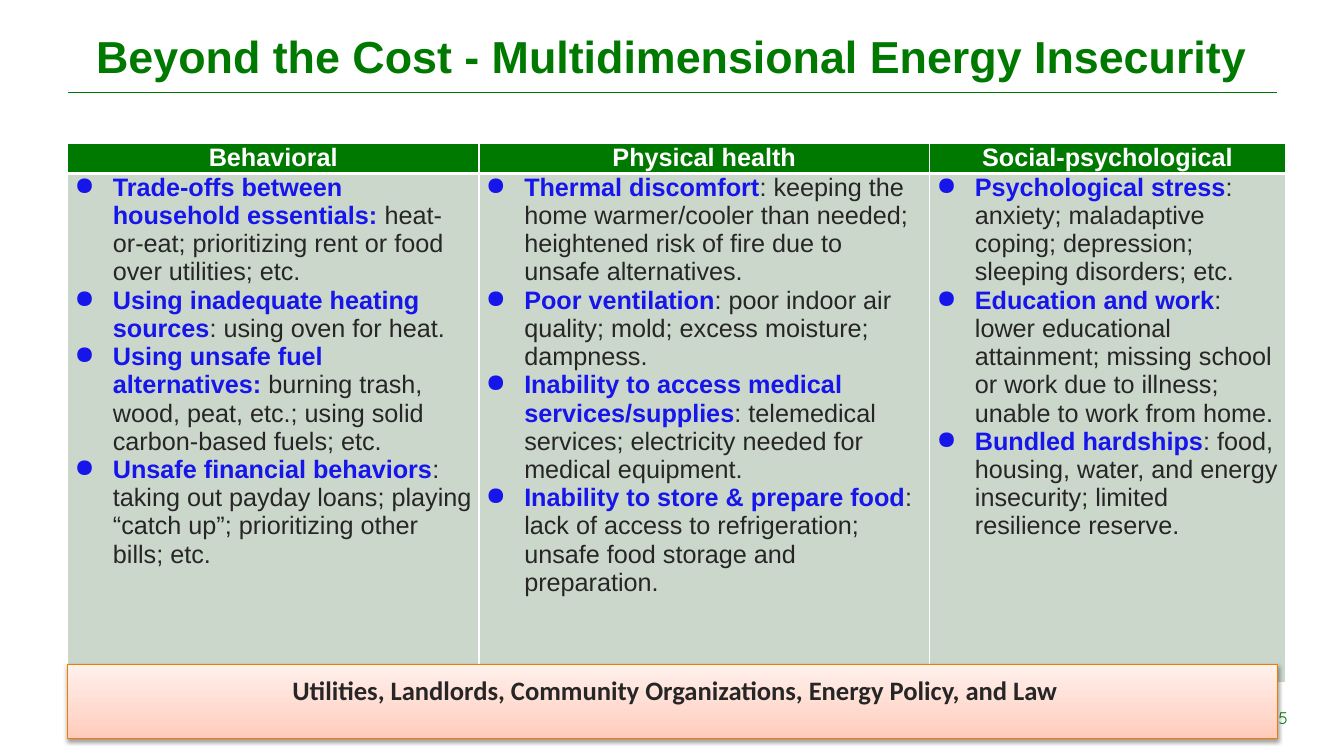
from lxml import etree
from pptx import Presentation
from pptx.dml.color import RGBColor
from pptx.enum.shapes import MSO_CONNECTOR as Connector, MSO_SHAPE as Shape
from pptx.enum.text import MSO_ANCHOR as Anchor, PP_ALIGN as Align
from pptx.oxml import parse_xml
from pptx.oxml.ns import nsdecls, qn
from pptx.util import Inches, Pt

TITLE = "Beyond the Cost - Multidimensional Energy Insecurity"
FOOTING = "Utilities, Landlords, Community Organizations, Energy Policy, and Law"
PAGE_NUMBER = "5"
# Heading, column width, and (bold lead, plain rest) points
DIMENSIONS = [
    ("Behavioral", 4.08, [
        ("Trade-offs between household essentials: ",
         "heat-or-eat; prioritizing rent or food over utilities; etc."),
        ("Using inadequate heating sources", ": using oven for heat."),
        ("Using unsafe fuel alternatives: ",
         "burning trash, wood, peat, etc.; using solid carbon-based fuels; etc."),
        ("Unsafe financial behaviors",
         ": taking out payday loans; playing “catch up”; prioritizing other bills; etc."),
    ]),
    ("Physical health", 4.47, [
        ("Thermal discomfort",
         ": keeping the home warmer/cooler than needed; "
         "heightened risk of fire due to unsafe alternatives."),
        ("Poor ventilation",
         ": poor indoor air quality; mold; excess moisture; dampness."),
        ("Inability to access medical services/supplies",
         ": telemedical services; electricity needed for medical equipment."),
        ("Inability to store & prepare food",
         ": lack of access to refrigeration; unsafe food storage and preparation."),
    ]),
    ("Social-psychological", 3.53, [
        ("Psychological stress",
         ": anxiety; maladaptive coping; depression; sleeping disorders; etc."),
        ("Education and work",
         ": lower educational attainment; missing school or work due to illness; "
         "unable to work from home."),
        ("Bundled hardships",
         ": food, housing, water, and energy insecurity; limited resilience reserve."),
    ]),
]

COLOURS = {"green": "007900", "rule": "007600", "white": "FFFFFF", "lead": "1616EA",
           "text": "262626", "cell": "CCD7CC", "orange": "F27C00"}
BAND_STOPS = [(0, "FFCAB9"), (35, "FFD9CE"), (100, "FFF1EC")]
FORMATS = {
    "title": dict(name="Arial", size=Pt(32), bold=True),
    "strong": dict(name="Arial", size=Pt(18), bold=True),
    "plain": dict(name="Arial", size=Pt(18), bold=False),
    "band": dict(name="Calibri", size=Pt(19), bold=True),
    "number": dict(name="Quicksand", size=Pt(12), bold=False),
}
WIDTH, HEIGHT = 13.33, 7.5
LEFT, CONTENT_WIDTH = 0.67, 12
TABLE_TOP, ROW_HEIGHTS = 1.42, (0.28, 5.05)
INDENT = 0.38


def colour(name):
    return RGBColor.from_string(COLOURS[name])


def area(*lengths):
    return [Inches(length) for length in lengths]


def add_span(para, text, style, ink):
    span = para.add_run()
    span.text = text
    for key, value in FORMATS[style].items():
        setattr(span.font, key, value)
    span.font.color.rgb = colour(ink)


def fill_frame(frame, text, style, ink, align, anchor):
    frame.word_wrap = True
    frame.vertical_anchor = anchor
    para = frame.paragraphs[0]
    para.alignment = align
    add_span(para, text, style, ink)


def add_bullet(para):
    props = para._p.get_or_add_pPr()
    props.set("marL", str(Inches(INDENT)))
    props.set("indent", str(-Inches(INDENT)))
    etree.SubElement(props, qn("a:buChar")).set("char", "●")


def format_cell(cell, fill, bottom_width):
    cell.margin_left = cell.margin_right = Inches(0.07)
    cell.margin_top = cell.margin_bottom = 0
    props = cell._tc.get_or_add_tcPr()
    for side, width in (("L", 1), ("R", 1), ("T", 1), ("B", bottom_width)):
        props.append(parse_xml(
            f'<a:ln{side} {nsdecls("a")} w="{Pt(width)}"><a:solidFill>'
            f'<a:srgbClr val="{COLOURS["white"]}"/></a:solidFill></a:ln{side}>'))
    cell.fill.solid()
    cell.fill.fore_color.rgb = colour(fill)


def add_dimensions(page):
    table_width = sum(width for _, width, _ in DIMENSIONS)
    table = page.shapes.add_table(
        2, len(DIMENSIONS),
        *area(LEFT, TABLE_TOP, table_width, sum(ROW_HEIGHTS))).table
    table.horz_banding = False
    for row, height in zip(table.rows, ROW_HEIGHTS):
        row.height = Inches(height)
    for index, (heading, width, points) in enumerate(DIMENSIONS):
        table.columns[index].width = Inches(width)
        header, body = table.cell(0, index), table.cell(1, index)
        format_cell(header, "green", 3)
        format_cell(body, "cell", 1)
        para = header.text_frame.paragraphs[0]
        para.alignment = Align.CENTER
        add_span(para, heading, "strong", "white")
        frame = body.text_frame
        for number, (lead, rest) in enumerate(points):
            para = frame.add_paragraph() if number else frame.paragraphs[0]
            add_bullet(para)
            add_span(para, lead, "strong", "lead")
            add_span(para, rest, "plain", "text")


def add_rule(page):
    rule = page.shapes.add_connector(
        Connector.STRAIGHT, *area(LEFT, 0.92, LEFT + CONTENT_WIDTH, 0.92))
    rule.line.color.rgb = colour("rule")
    rule.line.width = Pt(0.75)
    etree.SubElement(rule._element.spPr, qn("a:effectLst"))


def add_band(page):
    """Add the shaded bar across the foot of the table."""
    band = page.shapes.add_shape(Shape.RECTANGLE, *area(LEFT, 6.59, CONTENT_WIDTH, 0.74))
    band.line.color.rgb = colour("orange")
    band.line.width = Pt(0.75)
    band.shadow.inherit = False
    props = band._element.spPr
    stops = "".join(f'<a:gs pos="{share * 1000}"><a:srgbClr val="{shade}"/></a:gs>'
                    for share, shade in BAND_STOPS)
    props.find(qn("a:prstGeom")).addnext(parse_xml(
        f'<a:gradFill {nsdecls("a")} rotWithShape="1"><a:gsLst>{stops}</a:gsLst>'
        '<a:lin ang="16200000" scaled="0"/></a:gradFill>'))
    props.find(qn("a:effectLst")).append(parse_xml(
        f'<a:outerShdw {nsdecls("a")} blurRad="{Pt(3.1)}" dist="{Pt(1.6)}" dir="5400000"'
        ' rotWithShape="0"><a:srgbClr val="000000"><a:alpha val="38000"/></a:srgbClr>'
        '</a:outerShdw>'))
    frame = band.text_frame
    frame.margin_top, frame.margin_bottom = area(0.02, 0.25)
    frame.margin_right = Inches(0.05)
    fill_frame(frame, FOOTING, "band", "text", Align.CENTER, Anchor.MIDDLE)


def main():
    deck = Presentation()
    deck.slide_width, deck.slide_height = area(WIDTH, HEIGHT)
    page = deck.slides.add_slide(deck.slide_layouts[6])
    add_rule(page)
    title = page.shapes.add_textbox(*area(0.19, 0.06, 12.95, 0.98))
    fill_frame(title.text_frame, TITLE, "title", "green", Align.CENTER, Anchor.MIDDLE)
    add_dimensions(page)
    number = page.shapes.add_textbox(*area(3.12, 6.97, 9.75, 0.53))
    fill_frame(number.text_frame, PAGE_NUMBER, "number", "green", Align.RIGHT, Anchor.TOP)
    add_band(page)
    deck.save("out.pptx")


if __name__ == "__main__":
    main()
